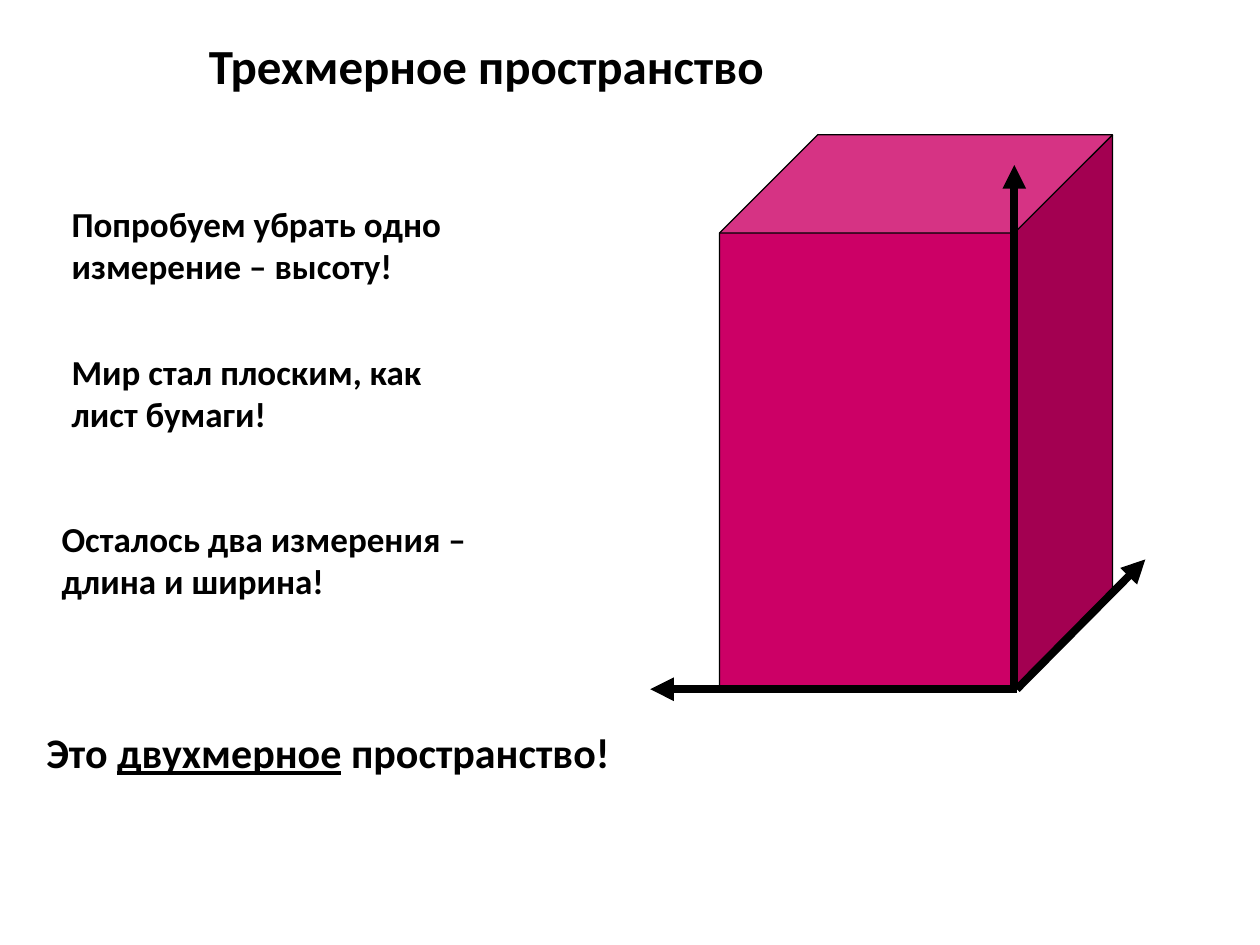
from lxml import etree
from pptx import Presentation
from pptx.dml.color import RGBColor
from pptx.enum.shapes import MSO_CONNECTOR, MSO_SHAPE
from pptx.enum.text import MSO_AUTO_SIZE
from pptx.oxml.ns import qn
from pptx.util import Inches, Pt

STRAIGHT = MSO_CONNECTOR.STRAIGHT
CUBE = MSO_SHAPE.CUBE
PARALLELOGRAM = MSO_SHAPE.PARALLELOGRAM
FIT_SHAPE = MSO_AUTO_SIZE.SHAPE_TO_FIT_TEXT


def color(hex_value):
    return RGBColor.from_string(hex_value)


class SpaceSlide:
    font = "Calibri"
    ink = "000000"
    solid_fill = "CC0066"
    edge_width = 0.75
    axis_width = 4.5

    def __init__(self, slide):
        self.shapes = slide.shapes

    def text(self, box, size, paragraphs):
        """Add bold text; each paragraph is a list of (words, underlined) runs."""
        frame = self.shapes.add_textbox(*map(Inches, box)).text_frame
        frame.word_wrap = False
        frame.auto_size = FIT_SHAPE
        for index, runs in enumerate(paragraphs):
            paragraph = frame.paragraphs[0] if index == 0 else frame.add_paragraph()
            for words, underlined in runs:
                run = paragraph.add_run()
                run.text = words
                run.font.name = self.font
                run.font.size = Pt(size)
                run.font.bold = True
                run.font.underline = underlined
                run.font.color.rgb = color(self.ink)

    def solid(self, preset, box, adjustment):
        shape = self.shapes.add_shape(preset, *map(Inches, box))
        shape.adjustments[0] = adjustment
        shape.shadow.inherit = False
        shape.fill.solid()
        shape.fill.fore_color.rgb = color(self.solid_fill)
        shape.line.color.rgb = color(self.ink)
        shape.line.width = Pt(self.edge_width)

    def axis(self, start, end):
        arrow = self.shapes.add_connector(STRAIGHT, *map(Inches, start + end))
        arrow.line.color.rgb = color(self.ink)
        arrow.line.width = Pt(self.axis_width)
        properties = arrow.line._get_or_add_ln()
        etree.SubElement(properties, qn("a:tailEnd"), type="triangle")
        etree.SubElement(arrow._element.spPr, qn("a:effectLst"))


def main():
    deck = Presentation()
    deck.slide_width, deck.slide_height = Inches(10), Inches(7.5)
    space = SpaceSlide(deck.slides.add_slide(deck.slide_layouts[6]))

    space.text((1.56, 0.23, 5.68, 0.57), 28, [[("Трехмерное пространство", False)]])

    space.solid(PARALLELOGRAM, (5.71, 4.68, 3.15, 0.79), 1)
    space.solid(CUBE, (5.71, 1.07, 3.12, 4.4), 0.25)

    origin = (8.07, 5.47)
    space.axis((8.05, 5.45), (8.05, 1.31))
    for end in ((9.09, 4.44), (5.16, 5.47)):
        space.axis(origin, end)

    statements = [
        ((0.47, 1.56, 3.77, 0.77), ("Попробуем убрать одно", "измерение – высоту!")),
        ((0.47, 2.73, 3.54, 0.77), ("Мир стал плоским, как", "лист бумаги!")),
        ((0.39, 4.06, 4.12, 0.77), ("Осталось два измерения –", "длина и ширина!")),
    ]
    for box, lines in statements:
        space.text(box, 20, [[(line, False)] for line in lines])

    conclusion = [("Это ", False), ("двухмерное", True), (" пространство!", False)]
    space.text((0.27, 5.72, 5.85, 0.51), 24, [conclusion])

    deck.save("out.pptx")


if __name__ == "__main__":
    main()
